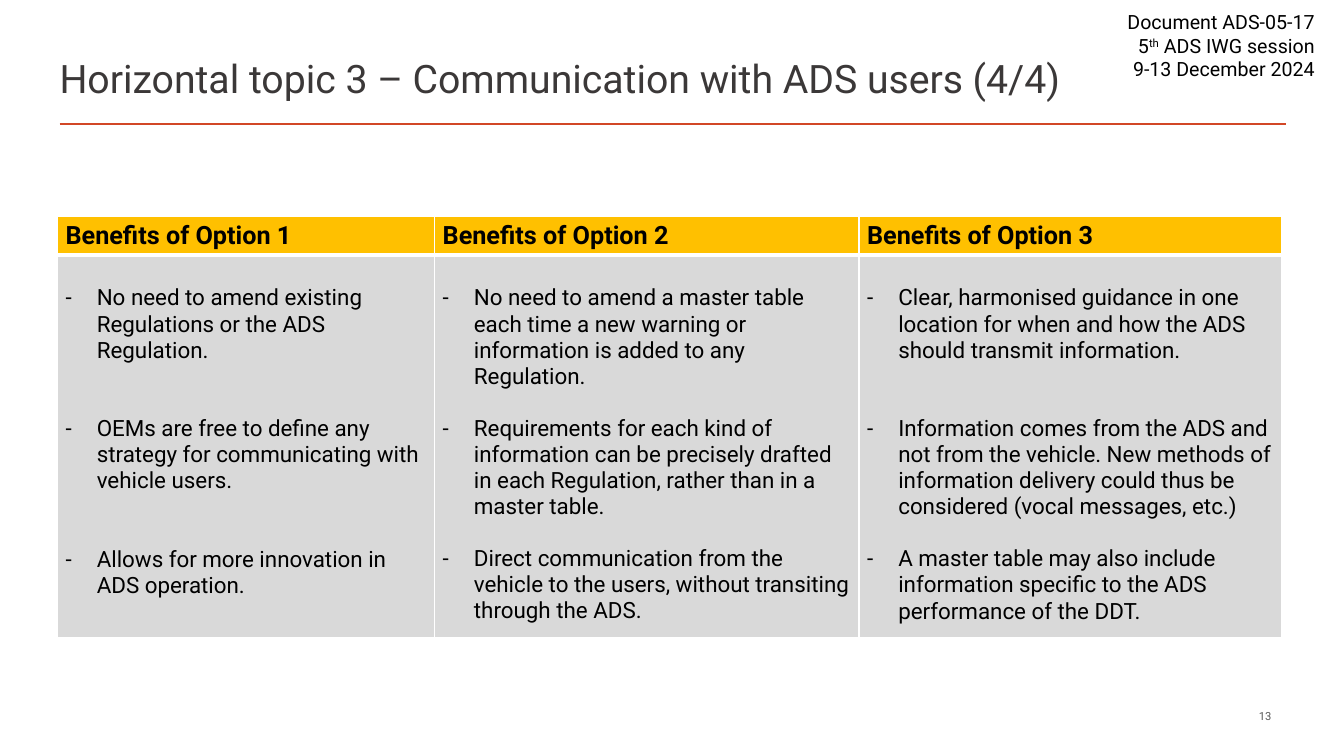
from dataclasses import dataclass

from lxml.etree import SubElement
from pptx import Presentation
from pptx.dml.color import RGBColor
from pptx.enum.shapes import MSO_CONNECTOR
from pptx.enum.text import MSO_ANCHOR, MSO_AUTO_SIZE, PP_ALIGN
from pptx.oxml.ns import qn
from pptx.util import Inches, Pt

COLORS = {
    "rule": "D24726", "title": "3B3838", "text": "000000", "number": "595959",
    "header": "FFC000", "body": "D9D9D9", "border": "FFFFFF",
}
FONT = "Roboto"
WIDTH, HEIGHT = Inches(13.33), Inches(7.5)
LINE = 18.75  # points per line of list text
HANG = Inches(0.31)


@dataclass(frozen=True)
class Box:
    """A place on the slide, in percent of its width and height."""
    left: float
    top: float
    width: float
    height: float

    def emu(self) -> tuple:
        return across(self.left), down(self.top), across(self.width), down(self.height)


@dataclass(frozen=True)
class Benefit:
    text: str
    lines_after: int = 0


@dataclass(frozen=True)
class Option:
    heading: str
    width: float
    benefits: tuple


OPTIONS = (
    Option("Benefits of Option 1", 28.06, (
        Benefit("No need to amend existing Regulations or the ADS Regulation.", 2),
        Benefit("OEMs are free to define any strategy for communicating with "
                "vehicle users.", 2),
        Benefit("Allows for more innovation in ADS operation."),
    )),
    Option("Benefits of Option 2", 31.58, (
        Benefit("No need to amend a master table each time a new warning or "
                "information is added to any Regulation.", 1),
        Benefit("Requirements for each kind of information can be precisely "
                "drafted in each Regulation, rather than in a master table.", 1),
        Benefit("Direct communication from the vehicle to the users, without "
                "transiting through the ADS."),
    )),
    Option("Benefits of Option 3", 31.43, (
        Benefit("Clear, harmonised guidance in one location for when and how "
                "the ADS should transmit information.", 2),
        Benefit("Information comes from the ADS and not from the vehicle. New "
                "methods of information delivery could thus be considered "
                "(vocal messages, etc.)", 1),
        Benefit("A master table may also include information specific to the "
                "ADS performance of the DDT."),
    )),
)
SESSION = (
    (("Document ADS-05-17", False),),
    (("5", False), ("th", True), (" ADS IWG session", False)),
    (("9-13 December 2024", False),),
)


def across(percent: float) -> int:
    return round(WIDTH * percent / 100)


def down(percent: float) -> int:
    return round(HEIGHT * percent / 100)


def rgb(name: str) -> RGBColor:
    return RGBColor.from_string(COLORS[name])


def apply(target, values: dict) -> None:
    for name, value in values.items():
        setattr(target, name, value)


def add_run(p, text: str, size: float, color: str = "text", bold: bool = False):
    r = p.add_run()
    r.text = text
    apply(r.font, {"name": FONT, "size": Pt(size), "bold": bold})
    r.font.color.rgb = rgb(color)
    return r


def add_title(slide, text: str) -> None:
    sp = slide.shapes.title
    apply(sp, dict(zip(("left", "top", "width", "height"),
                       Box(3.68, 6.27, 91.97, 8.13).emu())))
    tf = sp.text_frame
    apply(tf, {"word_wrap": True, "vertical_anchor": MSO_ANCHOR.MIDDLE,
               "auto_size": MSO_AUTO_SIZE.NONE})
    p = tf.paragraphs[0]
    p.alignment = PP_ALIGN.LEFT
    add_run(p, text, 28, "title")


def add_rule(slide) -> None:
    left, top, width, _ = Box(4.43, 16.4, 91.22, 0).emu()
    line = slide.shapes.add_connector(MSO_CONNECTOR.STRAIGHT, left, top, left + width, top)
    line.line.color.rgb = rgb("rule")
    line.line.width = Pt(2)
    SubElement(line._element.spPr, qn("a:effectLst"))


def add_session(slide) -> None:
    tf = slide.shapes.add_textbox(*Box(82.75, 0.67, 15.83, 10.8).emu()).text_frame
    apply(tf, {"word_wrap": False, "auto_size": MSO_AUTO_SIZE.SHAPE_TO_FIT_TEXT})
    for i, parts in enumerate(SESSION):
        p = tf.add_paragraph() if i else tf.paragraphs[0]
        p.alignment = PP_ALIGN.RIGHT
        for text, raised in parts:
            r = add_run(p, text, 14)
            if raised:
                r.font._element.set("baseline", "30000")


def add_number(slide, number: str) -> None:
    tf = slide.shapes.add_textbox(*Box(68.49, 93.73, 26.86, 2).emu()).text_frame
    apply(tf, {"word_wrap": True, "vertical_anchor": MSO_ANCHOR.MIDDLE,
               "margin_top": 0, "margin_bottom": 0})
    p = tf.paragraphs[0]
    p.alignment = PP_ALIGN.RIGHT
    add_run(p, number, 8, "number")


def format_cell(cell, fill: str, margin_top: float, edges: dict) -> None:
    """Set margins, borders (points by edge tag) and fill."""
    apply(cell, {"margin_left": Inches(0.08), "margin_right": Inches(0.08),
                 "margin_top": Inches(margin_top), "margin_bottom": Inches(0.04),
                 "vertical_anchor": MSO_ANCHOR.TOP})
    tcPr = cell._tc.get_or_add_tcPr()
    for edge, points in edges.items():
        ln = SubElement(tcPr, qn(f"a:{edge}"), w=str(Pt(points)))
        paint = SubElement(ln, qn("a:solidFill"))
        SubElement(paint, qn("a:srgbClr"), val=COLORS["border"])
    cell.fill.solid()
    cell.fill.fore_color.rgb = rgb(fill)


def add_benefit(p, benefit: Benefit) -> None:
    p.space_after = Pt(LINE * benefit.lines_after)
    pPr = p._p.get_or_add_pPr()
    pPr.set("marL", str(HANG))
    pPr.set("indent", str(-HANG))
    SubElement(pPr, qn("a:buFont"), typeface=FONT)
    SubElement(pPr, qn("a:buChar"), char="-")
    add_run(p, benefit.text, 16)


def add_options(slide) -> None:
    box = Box(4.28, 28.67, sum(o.width for o in OPTIONS), 53.2)
    table = slide.shapes.add_table(2, len(OPTIONS), *box.emu()).table
    table.horz_banding = False
    for row, share in zip(table.rows, (4.67, 48.53)):
        row.height = down(share)
    for i, option in enumerate(OPTIONS):
        table.columns[i].width = across(option.width)
        head, body = table.cell(0, i), table.cell(1, i)
        format_cell(head, "header", 0.04, {"lnL": 1, "lnR": 1, "lnT": 1, "lnB": 3})
        format_cell(body, "body", 0.3, {"lnL": 1, "lnR": 1, "lnT": 3, "lnB": 1})
        add_run(head.text_frame.paragraphs[0], option.heading, 18, bold=True)
        tf = body.text_frame
        for j, benefit in enumerate(option.benefits):
            add_benefit(tf.add_paragraph() if j else tf.paragraphs[0], benefit)


def main() -> None:
    prs = Presentation()
    apply(prs, {"slide_width": WIDTH, "slide_height": HEIGHT})
    slide = prs.slides.add_slide(prs.slide_layouts[5])
    add_rule(slide)
    add_session(slide)
    add_title(slide, "Horizontal topic 3 – Communication with ADS users (4/4)")
    add_number(slide, "13")
    add_options(slide)
    prs.save("out.pptx")


if __name__ == "__main__":
    main()
